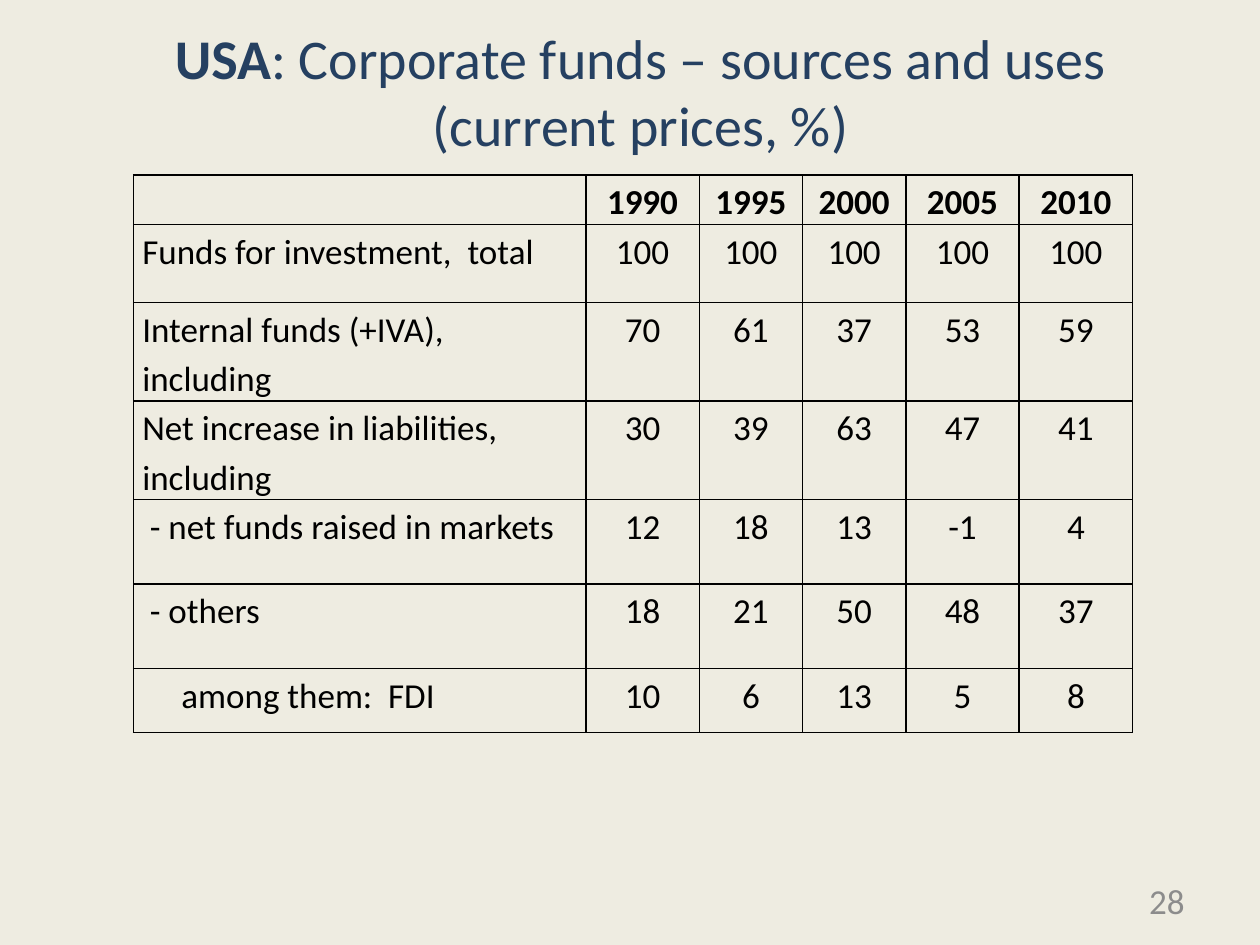
from lxml.etree import SubElement
from pptx import Presentation
from pptx.dml.color import RGBColor
from pptx.enum.text import MSO_ANCHOR, PP_ALIGN
from pptx.oxml.ns import qn
from pptx.util import Inches, Pt


def add_run(paragraph, text, size, color, bold=False):
    run = paragraph.add_run()
    run.text = text
    run.font.name = "Calibri"
    run.font.size = Pt(size)
    run.font.bold = bold
    run.font.color.rgb = RGBColor.from_string(color)


def outline_cell(cell, color):
    """Draw a 1 pt line on all four sides; call before setting the fill."""
    properties = cell._tc.get_or_add_tcPr()
    for side in ("a:lnL", "a:lnR", "a:lnT", "a:lnB"):
        line = SubElement(properties, qn(side), w=str(Pt(1)))
        fill = SubElement(line, qn("a:solidFill"))
        SubElement(fill, qn("a:srgbClr"), val=color)


prs = Presentation()
prs.slide_width, prs.slide_height = Inches(10), Inches(7.5)
slide = prs.slides.add_slide(prs.slide_layouts[5])
slide.background.fill.solid()
slide.background.fill.fore_color.rgb = RGBColor.from_string("EEECE1")

# Title
title = slide.shapes.title
title.left, title.top = Inches(0.5), Inches(0.21)
title.width, title.height = Inches(9.17), Inches(1.02)
title.text_frame.vertical_anchor = MSO_ANCHOR.MIDDLE
heading = title.text_frame.paragraphs[0]
heading.alignment = PP_ALIGN.CENTER
add_run(heading, "USA", 32, "254061", bold=True)
add_run(heading, ": Corporate funds – sources and uses", 32, "254061")
heading.add_line_break()
add_run(heading, "(current prices, %)", 32, "254061")

# Funds table: label, left indent, row height, values by year
funds = [
    ("", 0, 0.37, [1990, 1995, 2000, 2005, 2010]),
    ("Funds for investment,  total", 0, 0.62, [100] * 5),
    ("Internal funds (+IVA),\nincluding", 0, 0.39, [70, 61, 37, 53, 59]),
    ("Net increase in liabilities, including", 0, 0.7, [30, 39, 63, 47, 41]),
    ("- net funds raised in markets", 0.06, 0.67, [12, 18, 13, -1, 4]),
    ("- others", 0.06, 0.67, [18, 21, 50, 48, 37]),
    ("among them:  FDI", 0.31, 0.51, [10, 6, 13, 5, 8]),
]
column_widths = [3.59, 0.9, 0.82, 0.82, 0.9, 0.9]

table = slide.shapes.add_table(
    len(funds), len(column_widths), Inches(1.06), Inches(1.39),
    Inches(sum(column_widths)), Inches(sum(row[2] for row in funds))).table
table.first_row = table.horz_banding = False
for column, width in zip(table.columns, column_widths):
    column.width = Inches(width)

for r, (label, indent, height, values) in enumerate(funds):
    table.rows[r].height = Inches(height)
    for c, entry in enumerate([label, *values]):
        cell = table.cell(r, c)
        outline_cell(cell, "000000")
        cell.fill.background()
        cell.margin_left = cell.margin_right = Inches(0.07)
        cell.margin_top = cell.margin_bottom = 0
        for i, text in enumerate(str(entry).splitlines()):
            frame = cell.text_frame
            paragraph = frame.add_paragraph() if i else frame.paragraphs[0]
            paragraph.line_spacing = 1.15
            if c:
                paragraph.alignment = PP_ALIGN.CENTER
            elif indent:
                paragraph._p.get_or_add_pPr().set("marL", str(Inches(indent)))
            add_run(paragraph, text, 20, "000000", bold=r == 0)

# Page number
page_number = slide.shapes.add_textbox(
    Inches(7.17), Inches(6.95), Inches(2.33), Inches(0.4)).text_frame
page_number.word_wrap = True
page_number.vertical_anchor = MSO_ANCHOR.MIDDLE
page_number.paragraphs[0].alignment = PP_ALIGN.RIGHT
add_run(page_number.paragraphs[0], "28", 20, "8C8C8C")

prs.save("out.pptx")
